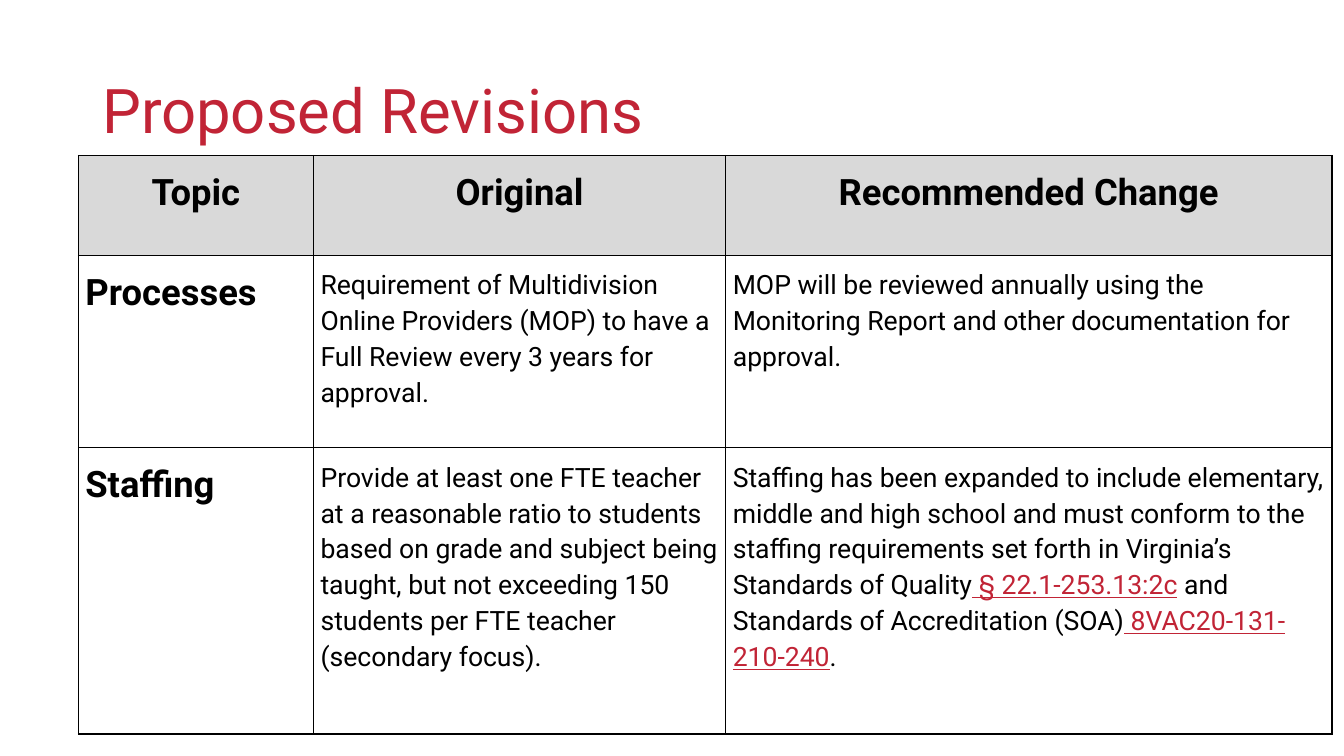
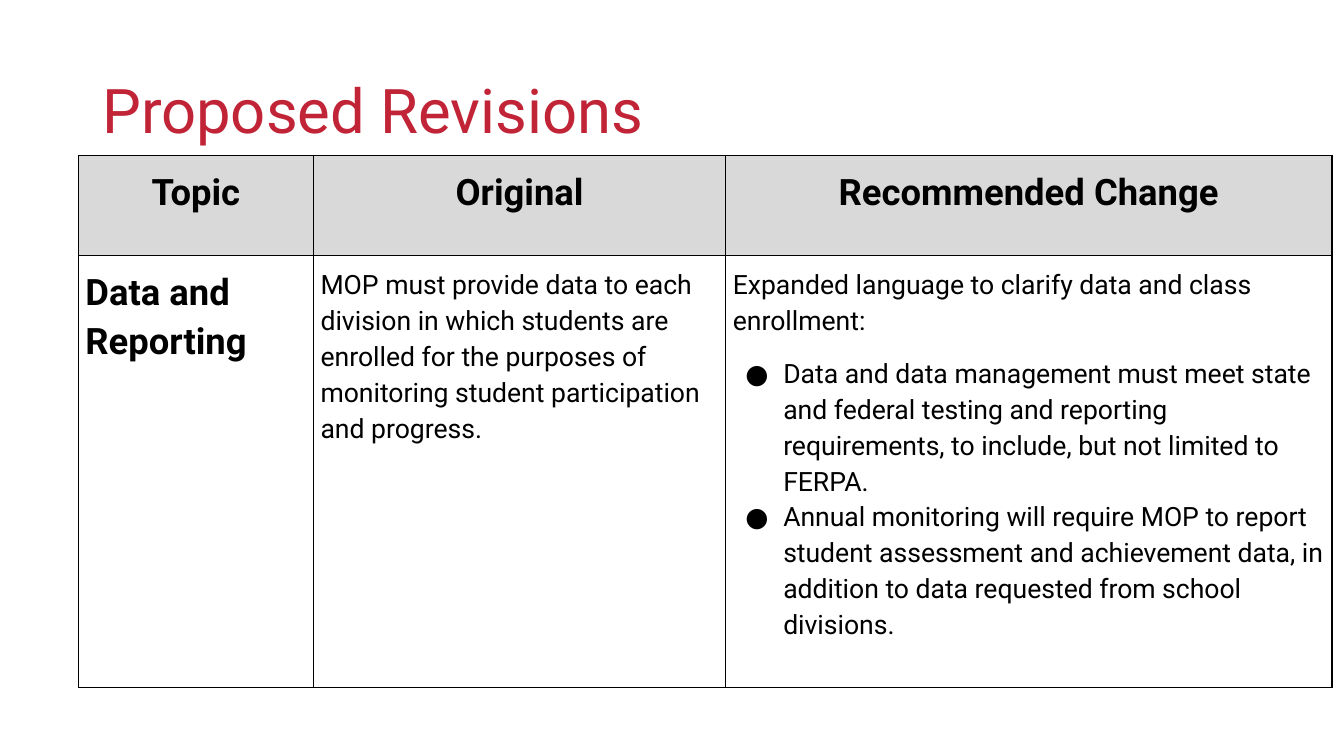
from lxml.etree import SubElement
from pptx import Presentation
from pptx.dml.color import RGBColor
from pptx.enum.text import MSO_ANCHOR, PP_ALIGN
from pptx.oxml.ns import qn
from pptx.util import Pt

FONT = "Roboto"
RED, BLACK, GREY = "C12436", "000000", "D9D9D9"
TITLE = "Proposed Revisions"
HEADINGS = ["Topic", "Original", "Recommended Change"]
COLUMN_WIDTHS = [168, 294.5, 433]
HEADING_HEIGHT = 71.3

# Each row: height, then the paragraphs of its three cells.
# Paragraphs after the first are bullets; text between bars is a citation.
SLIDES = [
    [
        (137.5, [
            ["Processes"],
            ["Requirement of Multidivision Online Providers (MOP) to have a "
             "Full Review every 3 years for approval."],
            ["MOP will be reviewed annually using the Monitoring Report and "
             "other documentation for approval."],
        ]),
        (204.5, [
            ["Staffing"],
            ["Provide at least one FTE teacher at a reasonable ratio to "
             "students based on grade and subject being taught, but not "
             "exceeding 150 students per FTE teacher (secondary focus)."],
            ["Staffing has been expanded to include elementary, middle and "
             "high school and must conform to the staffing requirements set "
             "forth in Virginia’s Standards of Quality| § 22.1-253.13:2c| and "
             "Standards of Accreditation (SOA)| 8VAC20-131-210-240|."],
        ]),
    ],
    [
        (308.5, [
            ["Data and Reporting"],
            ["MOP must provide data to each division in which students are "
             "enrolled for the purposes of monitoring student participation "
             "and progress."],
            ["Expanded language to clarify data and class enrollment:",
             "Data and data management must meet state and federal testing "
             "and reporting requirements, to include, but not limited to "
             "FERPA.",
             "Annual monitoring will require MOP to report student assessment "
             "and achievement data, in addition to data requested from school "
             "divisions."],
        ]),
    ],
]


def style_font(font, size, color, bold=False):
    font.name = FONT
    font.size = Pt(size)
    font.bold = bold
    font.color.rgb = RGBColor.from_string(color)


def fill_cell(cell, paragraphs, is_heading, is_topic):
    """Write one table cell with its borders, fill and text."""
    cell.margin_left = cell.margin_right = Pt(5)
    cell.margin_top = cell.margin_bottom = Pt(7.2)
    cell.vertical_anchor = MSO_ANCHOR.TOP
    properties = cell._tc.get_or_add_tcPr()
    for side in ("lnL", "lnR", "lnT", "lnB"):
        border = SubElement(properties, qn(f"a:{side}"), w=str(Pt(1)))
        border_fill = SubElement(border, qn("a:solidFill"))
        SubElement(border_fill, qn("a:srgbClr"), val=BLACK)
    if is_heading:
        cell.fill.solid()
        cell.fill.fore_color.rgb = RGBColor.from_string(GREY)
    else:
        cell.fill.background()

    frame = cell.text_frame
    for index, text in enumerate(paragraphs):
        paragraph = frame.add_paragraph() if index else frame.paragraphs[0]
        paragraph.line_spacing = 1.15
        if is_heading:
            paragraph.alignment = PP_ALIGN.CENTER
        if len(paragraphs) == 1:
            paragraph.space_after = Pt(12)
        if index == 1:
            paragraph.space_before = Pt(12)
        if index:
            bullet = paragraph._p.get_or_add_pPr()
            bullet.set("marL", str(Pt(36)))
            bullet.set("indent", str(Pt(-27)))
            bullet_color = SubElement(bullet, qn("a:buClr"))
            SubElement(bullet_color, qn("a:srgbClr"), val=BLACK)
            SubElement(bullet, qn("a:buFont"), typeface=FONT)
            SubElement(bullet, qn("a:buChar"), char="●")
        for part, words in enumerate(text.split("|")):
            run = paragraph.add_run()
            run.text = words
            is_citation = part % 2 == 1
            is_large = is_heading or is_topic
            style_font(run.font, 26 if is_large else 19,
                       RED if is_citation else BLACK, is_large)
            run.font.underline = is_citation


prs = Presentation()
prs.slide_width, prs.slide_height = Pt(960), Pt(540)

for topic_rows in SLIDES:
    slide = prs.slides.add_slide(prs.slide_layouts[6])

    title = slide.shapes.add_textbox(Pt(66), Pt(28.8), Pt(828), Pt(104.4))
    title_frame = title.text_frame
    title_frame.word_wrap = True
    title_frame.vertical_anchor = MSO_ANCHOR.MIDDLE
    title_frame.text = TITLE
    title_frame.paragraphs[0].line_spacing = 0.9
    style_font(title_frame.paragraphs[0].runs[0].font, 44, RED)

    rows = [(HEADING_HEIGHT, [[heading] for heading in HEADINGS])] + topic_rows
    revisions = slide.shapes.add_table(
        len(rows), len(HEADINGS), Pt(56), Pt(111),
        Pt(sum(COLUMN_WIDTHS)), Pt(sum(height for height, _ in rows))).table
    revisions.horz_banding = False
    for column, width in zip(revisions.columns, COLUMN_WIDTHS):
        column.width = Pt(width)
    for r, (height, cells) in enumerate(rows):
        revisions.rows[r].height = Pt(height)
        for c, paragraphs in enumerate(cells):
            fill_cell(revisions.cell(r, c), paragraphs, r == 0, c == 0)

prs.save("out.pptx")
